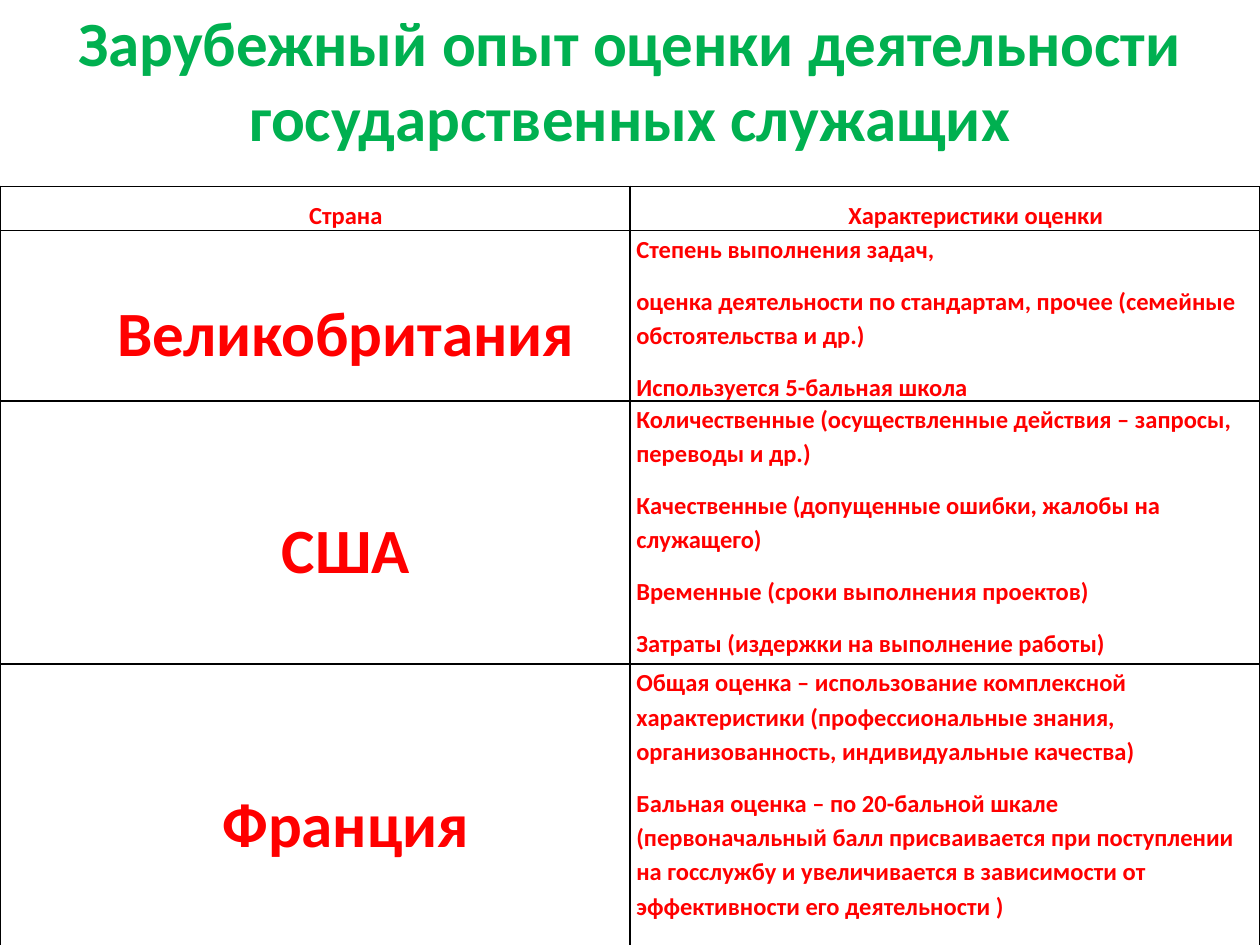
"""Build a slide comparing how three countries assess civil servants."""
from lxml.etree import SubElement
from pptx import Presentation
from pptx.dml.color import RGBColor
from pptx.enum.text import MSO_ANCHOR as Anchor, PP_ALIGN as Align
from pptx.oxml import parse_xml
from pptx.oxml.ns import nsdecls, qn
from pptx.util import Inches, Pt

GREEN, RED, BLACK = "00B050", "FF0000", "000000"


def write(paragraph, wording, size, color, **layout):
    run = paragraph.add_run()
    run.text = wording
    for key, value in dict(name="Calibri", size=Pt(size), bold=True).items():
        setattr(run.font, key, value)
    run.font.color.rgb = RGBColor.from_string(color)
    for key, value in layout.items():
        setattr(paragraph, key, value)


deck = Presentation()
deck.slide_width, deck.slide_height = Inches(10), Inches(7.5)
slide = deck.slides.add_slide(deck.slide_layouts[6])
width, height = deck.slide_width, deck.slide_height

heading = slide.shapes.add_textbox(width // 20, height // 25, width * 9 // 10, height // 6).text_frame
heading.word_wrap = True
heading.vertical_anchor = Anchor.MIDDLE
title = heading.paragraphs[0]
write(title, "Зарубежный опыт оценки деятельности государственных служащих", 36, GREEN, alignment=Align.CENTER)
title.add_line_break()
SubElement(title._p[-1], qn("a:rPr"), sz="3600")
SubElement(title._p, qn("a:endParaRPr"), sz="3600")

countries = [
    ("Страна", 14, 0.31, ["Характеристики оценки"]),
    ("Великобритания", 36, 1.11, [
        "Степень выполнения задач,",
        "оценка деятельности по стандартам, прочее (семейные обстоятельства и др.)",
        "Используется 5-бальная школа",
    ]),
    ("США", 36, 2.09, [
        "Количественные (осуществленные действия – запросы, переводы и др.)",
        "Качественные (допущенные ошибки, жалобы на служащего)",
        "Временные (сроки выполнения проектов)",
        "Затраты (издержки на выполнение работы)",
    ]),
    ("Франция", 36, 2.26, [
        "Общая оценка – использование комплексной характеристики "
        "(профессиональные знания, организованность, индивидуальные качества)",
        "Бальная оценка – по 20-бальной шкале (первоначальный балл присваивается при поступлении "
        "на госслужбу и увеличивается в зависимости от эффективности его деятельности )",
    ]),
]
comparison = slide.shapes.add_table(len(countries), 2, 0, Inches(1.48), width, Inches(6.02)).table
comparison.first_row = comparison.horz_banding = False
for column in comparison.columns:
    column.width = width // 2

cell_format = dict(margin_left=Inches(0.05), margin_right=Inches(0.05), margin_top=0, margin_bottom=0)
for row, (country, country_size, row_height, criteria) in enumerate(countries):
    comparison.rows[row].height = Inches(row_height)
    for col, (lines, size) in enumerate([([country], country_size), (criteria, 14)]):
        cell = comparison.cell(row, col)
        for key, value in cell_format.items():
            setattr(cell, key, value)
        centred = row == 0 or col == 0
        cell.vertical_anchor = Anchor.MIDDLE if row and col == 0 else Anchor.TOP
        for number, line in enumerate(lines):
            paragraph = cell.text_frame.add_paragraph() if number else cell.text_frame.paragraphs[0]
            write(paragraph, line, size, RED, space_after=Pt(10),
                  alignment=Align.CENTER if centred else Align.LEFT,
                  line_spacing=1.5 if centred else 1.15)
            if centred:
                paragraph._p.get_or_add_pPr().set("indent", str(Inches(0.49)))
        cell.fill.background()
        for place, side in enumerate("LRTB"):
            cell._tc.tcPr.insert(place, parse_xml(
                f'<a:ln{side} {nsdecls("a")} w="{Pt(1)}"><a:solidFill><a:srgbClr val="{BLACK}"/>'
                f'</a:solidFill></a:ln{side}>'))

deck.save("out.pptx")
